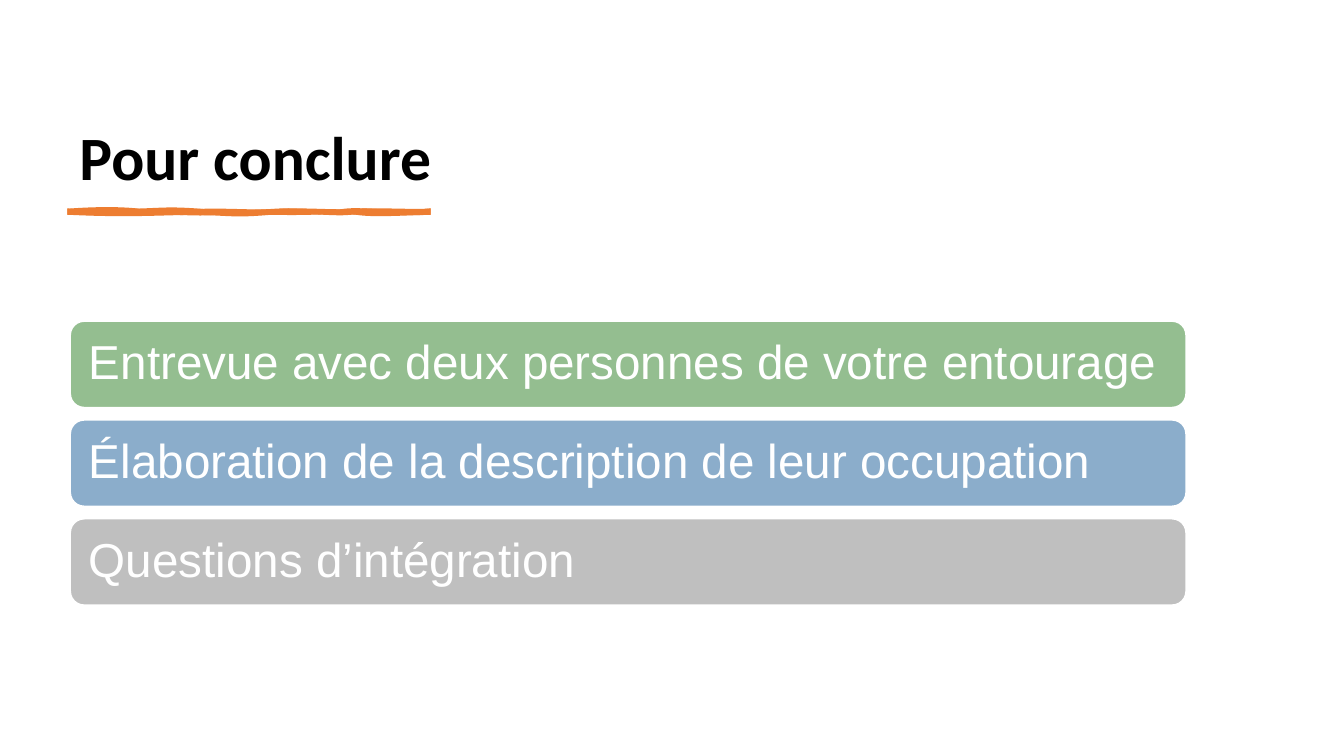
from dataclasses import dataclass

from lxml.etree import SubElement
from pptx import Presentation
from pptx.dml.color import RGBColor
from pptx.enum.shapes import MSO_SHAPE
from pptx.enum.text import MSO_ANCHOR, PP_ALIGN
from pptx.oxml.ns import qn
from pptx.slide import Slide
from pptx.text.text import TextFrame
from pptx.util import Inches, Pt

Point = tuple[float, float]
Curve = tuple[Point, Point, Point]


@dataclass(frozen=True)
class Theme:
    ink: RGBColor = RGBColor(0, 0, 0)
    white: RGBColor = RGBColor(255, 255, 255)
    accent: RGBColor = RGBColor.from_string("ED7D31")
    green: RGBColor = RGBColor.from_string("94BE90")
    blue: RGBColor = RGBColor.from_string("8BADCB")
    gray: RGBColor = RGBColor.from_string("BFBFBF")
    head_font: str = "Calibri"
    body_font: str = "Arial"
    head_size: int = 44
    body_size: int = 34


@dataclass(frozen=True)
class Bar:
    text: str
    color: RGBColor


@dataclass(frozen=True)
class Stroke:
    filled: bool
    curves: list[Curve]


THEME = Theme()
LEFT = 0.69
BAR_TOP, BAR_STEP, BAR_WIDTH, BAR_HEIGHT = 3.18, 0.98, 11.08, 0.87
BARS = [
    Bar("Entrevue avec deux personnes de votre entourage", THEME.green),
    Bar("Élaboration de la description de leur occupation", THEME.blue),
    Bar("Questions d’intégration", THEME.gray),
]
START: Point = (LEFT, 2.09)
STROKES = [
    Stroke(False, [
        ((0.95, 2.07), (1.2, 2.07), (1.37, 2.09)),
        ((1.54, 2.12), (1.76, 2.1), (2.08, 2.09)),
        ((2.4, 2.09), (2.59, 2.11), (2.83, 2.09)),
        ((3.07, 2.08), (3.37, 2.11), (3.57, 2.09)),
        ((3.77, 2.08), (4.1, 2.1), (4.25, 2.09)),
        ((4.25, 2.1), (4.25, 2.11), (4.25, 2.11)),
        ((4.07, 2.12), (3.63, 2.1), (3.47, 2.11)),
        ((3.3, 2.13), (3.03, 2.08), (2.68, 2.11)),
        ((2.34, 2.14), (2.29, 2.12), (1.97, 2.11)),
        ((1.65, 2.11), (1.3, 2.14), (0.69, 2.11)),
        ((0.69, 2.11), (0.69, 2.1), (0.69, 2.09)),
    ]),
    Stroke(True, [
        ((1.01, 2.12), (1.09, 2.1), (1.37, 2.09)),
        ((1.65, 2.08), (1.68, 2.07), (1.97, 2.09)),
        ((2.26, 2.12), (2.6, 2.1), (2.75, 2.09)),
        ((2.91, 2.08), (3.26, 2.12), (3.43, 2.09)),
        ((3.61, 2.07), (3.96, 2.13), (4.25, 2.09)),
        ((4.25, 2.1), (4.25, 2.1), (4.25, 2.11)),
        ((4.1, 2.11), (3.71, 2.14), (3.54, 2.11)),
        ((3.37, 2.09), (3.08, 2.12), (2.75, 2.11)),
        ((2.43, 2.11), (2.38, 2.1), (2.15, 2.11)),
        ((1.92, 2.13), (1.78, 2.1), (1.44, 2.11)),
        ((1.1, 2.12), (0.91, 2.11), (0.69, 2.11)),
        ((0.69, 2.1), (0.69, 2.1), (0.69, 2.09)),
    ]),
]


def emu(point: Point) -> tuple[int, int]:
    return Inches(point[0]), Inches(point[1])


def write(frame: TextFrame, text: str, font: str, size: int,
          color: RGBColor, bold: bool = False) -> None:
    frame.word_wrap = True
    line = frame.paragraphs[0]
    line.text = text
    line.alignment = PP_ALIGN.LEFT
    line.line_spacing = 0.9
    line.font.name = font
    line.font.size = Pt(size)
    line.font.bold = bold
    line.font.color.rgb = color


def add_title(slide: Slide, text: str) -> None:
    box = slide.shapes.add_textbox(
        Inches(LEFT), Inches(0.35), Inches(5.27), Inches(1.62))
    box.text_frame.vertical_anchor = MSO_ANCHOR.BOTTOM
    write(box.text_frame, text, THEME.head_font, THEME.head_size,
          THEME.ink, bold=True)


def add_rule(slide: Slide, strokes: list[Stroke]) -> None:
    pen = slide.shapes.build_freeform(*emu(START))
    pen.add_line_segments([emu(c[2]) for c in strokes[0].curves])
    rule = pen.convert_to_shape()
    rule.shadow.inherit = False
    rule.fill.solid()
    rule.fill.fore_color.rgb = THEME.accent
    rule.line.color.rgb = THEME.accent
    rule.line.width = Pt(3)
    SubElement(rule.line._get_or_add_ln(), qn("a:miter"), lim="800000")

    def put(node, point: Point) -> None:
        x, y = emu(point)
        SubElement(node, qn("a:pt"), x=str(x - rule.left), y=str(y - rule.top))

    paths = rule._element.spPr.find(".//" + qn("a:pathLst"))
    paths.remove(paths[0])
    for stroke in strokes:
        trace = SubElement(paths, qn("a:path"),
                           w=str(rule.width), h=str(rule.height))
        if not stroke.filled:
            trace.set("fill", "none")
        put(SubElement(trace, qn("a:moveTo")), START)
        for curve in stroke.curves:
            bend = SubElement(trace, qn("a:cubicBezTo"))
            for point in curve:
                put(bend, point)
        SubElement(trace, qn("a:close"))


def add_bar(slide: Slide, bar: Bar, top: float) -> None:
    shape = slide.shapes.add_shape(
        MSO_SHAPE.ROUNDED_RECTANGLE, Inches(LEFT), Inches(top),
        Inches(BAR_WIDTH), Inches(BAR_HEIGHT))
    shape.shadow.inherit = False
    shape.fill.solid()
    shape.fill.fore_color.rgb = bar.color
    shape.line.color.rgb = THEME.white
    shape.line.width = Pt(2)
    frame = shape.text_frame
    frame.margin_left = frame.margin_right = Inches(0.15)
    frame.margin_top = frame.margin_bottom = Inches(0.14)
    frame.vertical_anchor = MSO_ANCHOR.MIDDLE
    write(frame, bar.text, THEME.body_font, THEME.body_size, THEME.white)


def main() -> None:
    deck = Presentation()
    deck.slide_width, deck.slide_height = Inches(13.33), Inches(7.5)
    slide = deck.slides.add_slide(deck.slide_layouts[6])
    add_title(slide, "Pour conclure")
    add_rule(slide, STROKES)
    for row, bar in enumerate(BARS):
        add_bar(slide, bar, BAR_TOP + row * BAR_STEP)
    deck.save("out.pptx")


if __name__ == "__main__":
    main()
